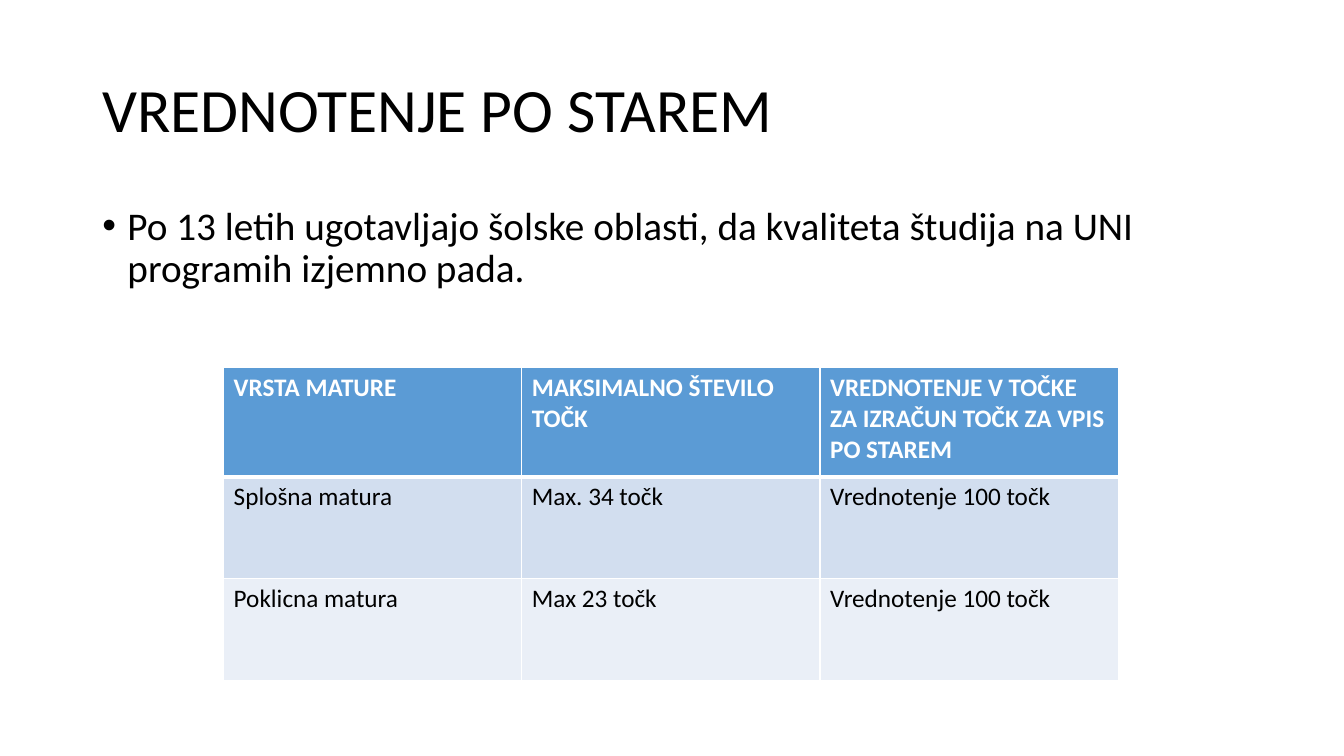
"""Build the slide on the old scoring of the matura exams."""
from lxml import etree
from pptx import Presentation, util as u
from pptx.dml.color import RGBColor
from pptx.enum import text
from pptx.oxml import ns

PX = 9525
BLACK = RGBColor(0x00, 0x00, 0x00)
WHITE = RGBColor(0xFF, 0xFF, 0xFF)
BLUE = RGBColor(0x5B, 0x9B, 0xD5)
BAND_DARK = RGBColor(0xD2, 0xDE, 0xEF)
BAND_LIGHT = RGBColor(0xEA, 0xEF, 0xF7)


def add_run(p, words, size, color, bold=False):
    r = p.add_run()
    r.text = words
    r.font.name = "Calibri"
    r.font.size = u.Pt(size)
    r.font.bold = bold
    r.font.color.rgb = color


def add_border(cell, side, width):
    ln = etree.SubElement(cell._tc.get_or_add_tcPr(), ns.qn("a:ln" + side), w=str(u.Pt(width)))
    fill = etree.SubElement(ln, ns.qn("a:solidFill"))
    etree.SubElement(fill, ns.qn("a:srgbClr"), val=str(WHITE))


prs = Presentation()
prs.slide_width, prs.slide_height = 1280 * PX, 720 * PX
s = prs.slides.add_slide(prs.slide_layouts[6])

texts = [
    (38, 139, text.MSO_ANCHOR.MIDDLE, 44, "VREDNOTENJE PO STAREM"),
    (192, 457, text.MSO_ANCHOR.TOP, 28,
     "Po 13 letih ugotavljajo šolske oblasti, da kvaliteta študija na UNI programih izjemno pada."),
]
for top, height, anchor, size, words in texts:
    sp = s.shapes.add_textbox(88 * PX, top * PX, 1104 * PX, height * PX)
    tf = sp.text_frame
    tf.word_wrap = True
    tf.vertical_anchor = anchor
    p = tf.paragraphs[0]
    p.line_spacing = 0.9
    add_run(p, words, size, BLACK)

p.space_before = u.Pt(10)
pPr = p._p.get_or_add_pPr()
pPr.set("marL", str(24 * PX))
pPr.set("indent", str(-24 * PX))
etree.SubElement(pPr, ns.qn("a:buFont"), typeface="Arial")
etree.SubElement(pPr, ns.qn("a:buChar"), char="•")

rows = [
    (104, BLUE, WHITE, ["VRSTA MATURE", "MAKSIMALNO ŠTEVILO TOČK",
                        "VREDNOTENJE V TOČKE ZA IZRAČUN TOČK ZA VPIS PO STAREM"]),
    (97, BAND_DARK, BLACK, ["Splošna matura", "Max. 34 točk", "Vrednotenje 100 točk"]),
    (97, BAND_LIGHT, BLACK, ["Poklicna matura", "Max 23 točk", "Vrednotenje 100 točk"]),
]
table = s.shapes.add_table(3, 3, 213 * PX, 350 * PX, 852 * PX, 298 * PX).table
for col in table.columns:
    col.width = 284 * PX
for i, (height, fill, color, words) in enumerate(rows):
    table.rows[i].height = height * PX
    for j, label in enumerate(words):
        cell = table.cell(i, j)
        add_run(cell.text_frame.paragraphs[0], label, 18, color, bold=i == 0)
        for side in "LRTB":
            add_border(cell, side, 3 if (i, side) in [(0, "B"), (1, "T")] else 1)
        cell.fill.solid()
        cell.fill.fore_color.rgb = fill

prs.save("out.pptx")
